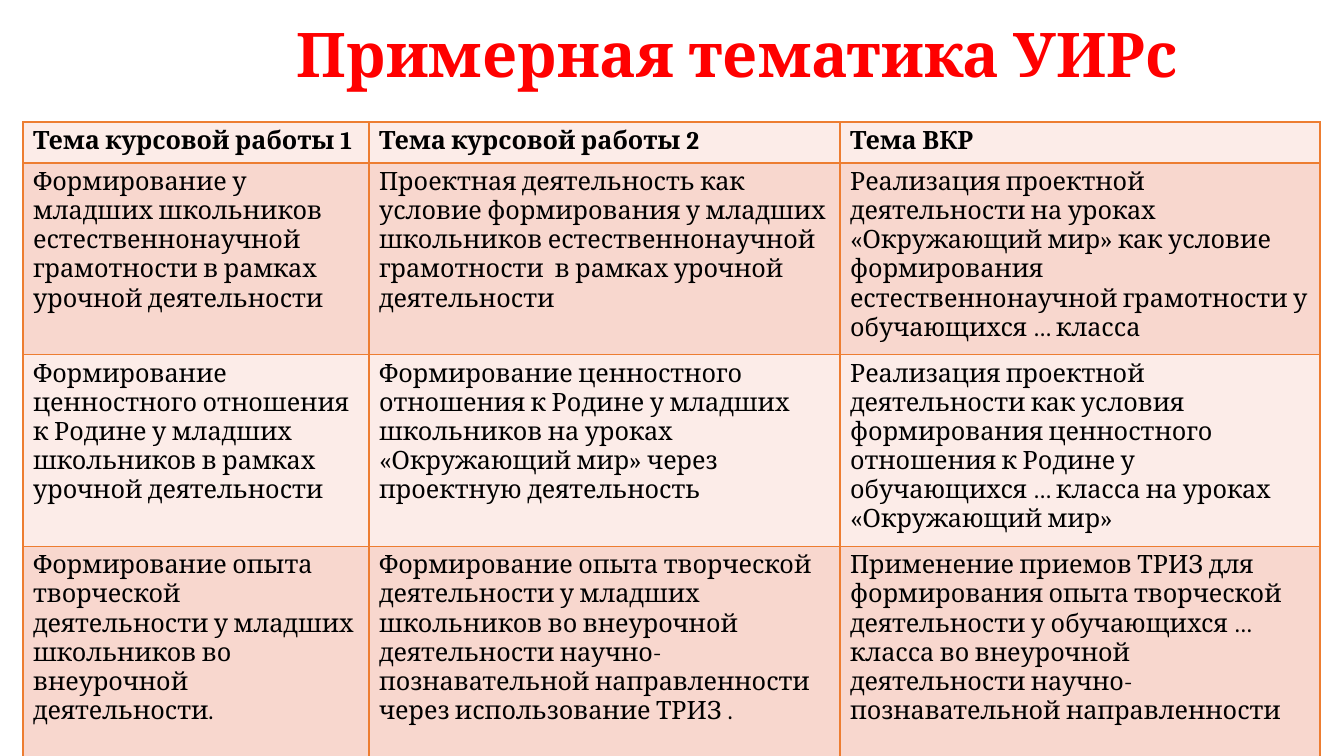
from lxml import etree
from pptx import Presentation
from pptx import util as u
from pptx.dml.color import RGBColor
from pptx.enum import text
from pptx.oxml.ns import qn

PX = 12192000 / 1344
FONT = "Cambria"
COLORS = {
    "title": "FF0000",
    "body": "000000",
    "border": "ED7D31",
    "light": "FCECE8",
    "dark": "F8D7CE",
}
COLUMN_WIDTHS = [346, 471, 480]
ROW_HEIGHTS = [41, 185, 185, 213]
TOPICS = [
    ["Тема курсовой работы 1", "Тема курсовой работы 2", "Тема ВКР"],
    [
        "Формирование у младших школьников естественнонаучной грамотности "
        "в рамках урочной деятельности",
        "Проектная деятельность как условие формирования у младших школьников "
        "естественнонаучной грамотности  в рамках урочной деятельности",
        "Реализация проектной деятельности на уроках «Окружающий мир» как условие "
        "формирования естественнонаучной грамотности у обучающихся … класса",
    ],
    [
        "Формирование ценностного отношения  к Родине у младших школьников "
        "в рамках урочной деятельности",
        "Формирование ценностного отношения к Родине у младших школьников "
        "на уроках «Окружающий мир» через проектную деятельность",
        "Реализация проектной деятельности как условия формирования ценностного "
        "отношения к Родине у обучающихся … класса на уроках «Окружающий мир»",
    ],
    [
        "Формирование опыта творческой деятельности у младших школьников "
        "во внеурочной деятельности.",
        "Формирование опыта творческой деятельности у младших школьников "
        "во внеурочной деятельности научно-познавательной направленности  "
        "через использование ТРИЗ .",
        "Применение приемов ТРИЗ для формирования опыта творческой деятельности "
        "у обучающихся … класса во внеурочной деятельности "
        "научно-познавательной направленности",
    ],
]


def px(length):
    return u.Emu(round(length * PX))


def color(name):
    return RGBColor.from_string(COLORS[name])


def format_runs(paragraph, size, color_name, bold):
    for run in paragraph.runs:
        run.font.name = FONT
        run.font.size = u.Pt(size)
        run.font.bold = bold
        run.font.color.rgb = color(color_name)


def add_title(slide, wording, left, top, width, height):
    frame = slide.shapes.add_textbox(*map(px, (left, top, width, height))).text_frame
    frame.word_wrap = True
    frame.vertical_anchor = text.MSO_ANCHOR.MIDDLE
    frame.text = wording
    heading = frame.paragraphs[0]
    heading.alignment = text.PP_ALIGN.CENTER
    heading.line_spacing = 0.9
    format_runs(heading, 44, "title", True)


def add_borders(cell):
    properties = cell._tc.get_or_add_tcPr()
    for position, side in enumerate(("lnL", "lnR", "lnT", "lnB")):
        border = etree.Element(qn(f"a:{side}"), w=str(u.Pt(1)))
        fill = etree.SubElement(border, qn("a:solidFill"))
        etree.SubElement(fill, qn("a:srgbClr"), val=COLORS["border"])
        properties.insert(position, border)


def fill_cell(cell, wording, fill_name, bold):
    cell.text = wording
    format_runs(cell.text_frame.paragraphs[0], 18, "body", bold)
    cell.fill.solid()
    cell.fill.fore_color.rgb = color(fill_name)
    add_borders(cell)


def add_topics(slide, left, top):
    size = (sum(COLUMN_WIDTHS), sum(ROW_HEIGHTS))
    topics = slide.shapes.add_table(
        len(TOPICS), len(COLUMN_WIDTHS), *map(px, (left, top, *size))
    ).table
    for column, width in zip(topics.columns, COLUMN_WIDTHS):
        column.width = px(width)
    for row, height in zip(topics.rows, ROW_HEIGHTS):
        row.height = px(height)
    for r, wordings in enumerate(TOPICS):
        for c, wording in enumerate(wordings):
            fill_name = "dark" if r % 2 else "light"
            fill_cell(topics.cell(r, c), wording, fill_name, r == 0)


def main():
    deck = Presentation()
    deck.slide_width, deck.slide_height = px(1344), px(756)
    slide = deck.slides.add_slide(deck.slide_layouts[6])
    add_title(slide, "Примерная тематика УИРс", 197, 13, 1082, 89)
    add_topics(slide, 23, 122)
    deck.save("out.pptx")


if __name__ == "__main__":
    main()
